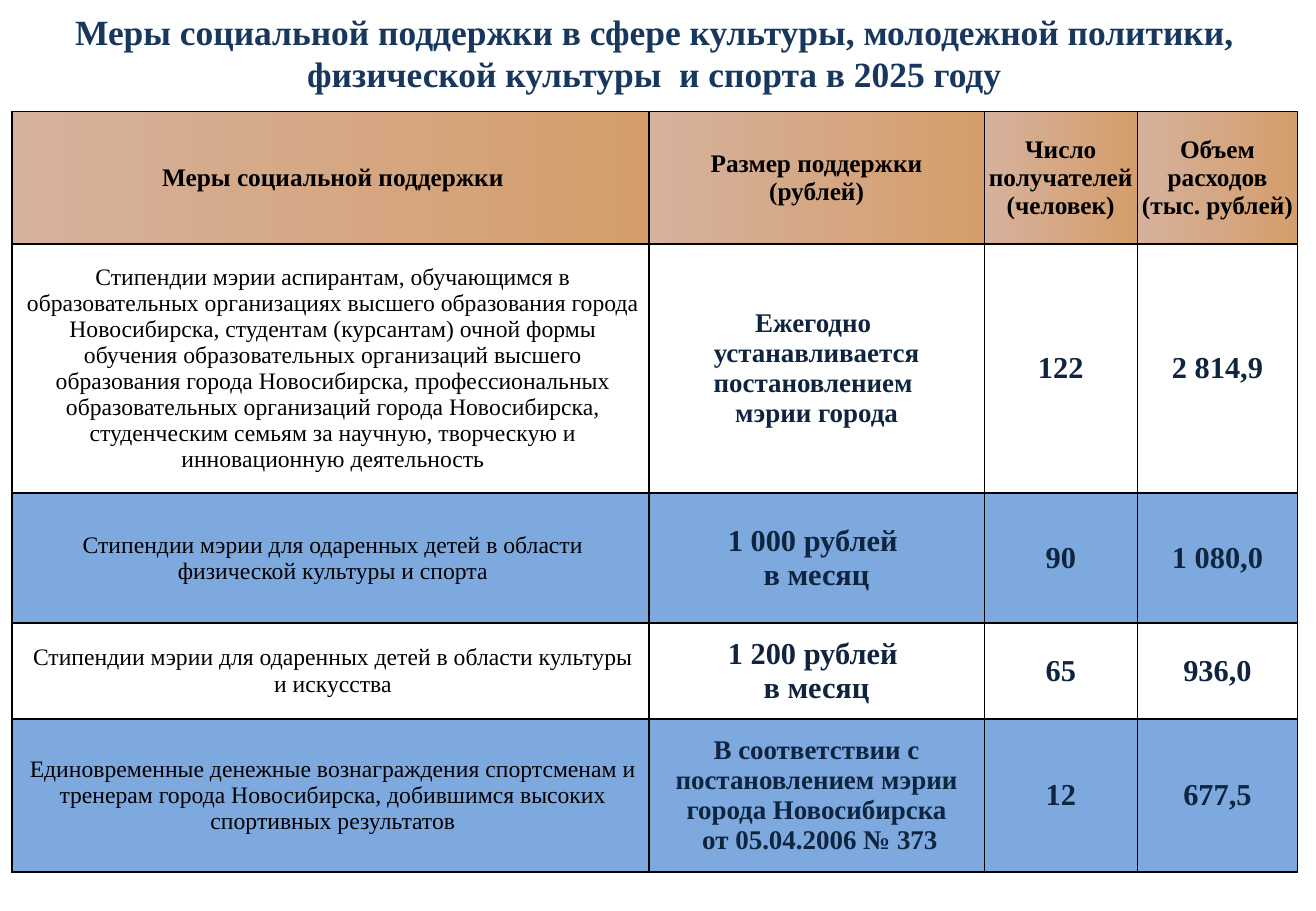
import pptx
import pptx.util
import pptx.dml.color
import pptx.enum.text
import pptx.oxml
import pptx.oxml.ns
from pptx.util import Inches

# Content
TITLE = ("Меры социальной поддержки в сфере культуры, молодежной политики, "
         "физической культуры  и спорта в 2025 году")
HEADER = ["Меры социальной поддержки", "Размер поддержки\n(рублей)",
          "Число получателей (человек)", "Объем расходов (тыс. рублей)"]
MEASURES = [
    ["Стипендии мэрии аспирантам, обучающимся в образовательных организациях "
     "высшего образования города Новосибирска, студентам (курсантам) очной формы "
     "обучения образовательных организаций высшего образования города Новосибирска, "
     "профессиональных образовательных организаций города Новосибирска, студенческим "
     "семьям за научную, творческую и инновационную деятельность",
     "Ежегодно \nустанавливается постановлением \nмэрии города", "122", "2 814,9"],
    ["Стипендии мэрии для одаренных детей в области физической культуры и спорта",
     "1 000 рублей \nв месяц", "90", "1 080,0"],
    ["Стипендии мэрии для одаренных детей в области культуры и искусства",
     "1 200 рублей \nв месяц", "65", "936,0"],
    ["Единовременные денежные вознаграждения спортсменам и тренерам города "
     "Новосибирска, добившимся высоких спортивных результатов",
     "В соответствии с постановлением мэрии города Новосибирска\n от 05.04.2006 № 373",
     "12", "677,5"],
]
AMOUNT_SIZES = [16, 18, 18, 16]
COLUMN_WIDTHS = [5.24, 2.76, 1.26, 1.32]
ROW_HEIGHTS = [1.09, 2.05, 1.07, 0.79, 1.26]
FONT = "Times New Roman"
COLORS = {"title": "17375E", "text": "000000", "value": "0F243E", "band": "7DA9DF",
          "plain": "FFFFFF", "border": "000000",
          "header_left": "D6B19C", "header_right": "D49E6C"}


def color(name):
    return pptx.dml.color.RGBColor.from_string(COLORS[name])


def write(text_frame, text, size, color_name, bold):
    text_frame.text = text
    for paragraph in text_frame.paragraphs:
        paragraph.alignment = pptx.enum.text.PP_ALIGN.CENTER
        for run in paragraph.runs:
            run.font.name = FONT
            run.font.size = pptx.util.Pt(size)
            run.font.bold = bold
            run.font.color.rgb = color(color_name)


def add_borders(cell):
    properties = cell._tc.get_or_add_tcPr()
    for position, side in enumerate(("lnL", "lnR", "lnT", "lnB")):
        properties.insert(position, pptx.oxml.parse_xml(
            f'<a:{side} {pptx.oxml.ns.nsdecls("a")} w="12700"><a:solidFill>'
            f'<a:srgbClr val="{COLORS["border"]}"/></a:solidFill></a:{side}>'))


def fill_cell(cell, row):
    if row == 0:
        cell.fill.gradient()
        cell.fill.gradient_angle = 0
        for stop, name in zip(cell.fill.gradient_stops, ("header_left", "header_right")):
            stop.color.rgb = color(name)
    else:
        cell.fill.solid()
        cell.fill.fore_color.rgb = color("plain" if row % 2 else "band")


def cell_style(row, column):
    if row == 0:
        return 15, "text", True
    if column == 0:
        return 14, "text", False
    return (AMOUNT_SIZES[row - 1] if column == 1 else 18), "value", True


def main():
    presentation = pptx.Presentation()
    presentation.slide_width = Inches(10.83)
    presentation.slide_height = Inches(7.5)
    slide = presentation.slides.add_slide(presentation.slide_layouts[5])

    # Title
    title = slide.shapes.title
    title.left, title.top = Inches(0), Inches(0.03)
    title.width, title.height = Inches(10.77), Inches(0.81)
    title.text_frame.vertical_anchor = pptx.enum.text.MSO_ANCHOR.TOP
    title.text_frame.auto_size = pptx.enum.text.MSO_AUTO_SIZE.NONE
    write(title.text_frame, TITLE, 21, "title", True)

    # Table of support measures
    rows = [HEADER] + MEASURES
    table = slide.shapes.add_table(
        len(rows), len(HEADER), Inches(0.1), Inches(0.92),
        Inches(sum(COLUMN_WIDTHS)), Inches(sum(ROW_HEIGHTS))).table
    for column, width in zip(table.columns, COLUMN_WIDTHS):
        column.width = Inches(width)
    for row, height in zip(table.rows, ROW_HEIGHTS):
        row.height = Inches(height)

    for row, texts in enumerate(rows):
        for column, text in enumerate(texts):
            cell = table.cell(row, column)
            cell.vertical_anchor = pptx.enum.text.MSO_ANCHOR.MIDDLE
            cell.margin_left = Inches(0 if column else 0.12)
            cell.margin_right = Inches(0 if column else 0.08)
            cell.margin_top = cell.margin_bottom = Inches(0 if column or row == 0 else 0.12)
            write(cell.text_frame, text, *cell_style(row, column))
            fill_cell(cell, row)
            add_borders(cell)

    presentation.save("out.pptx")


if __name__ == "__main__":
    main()
